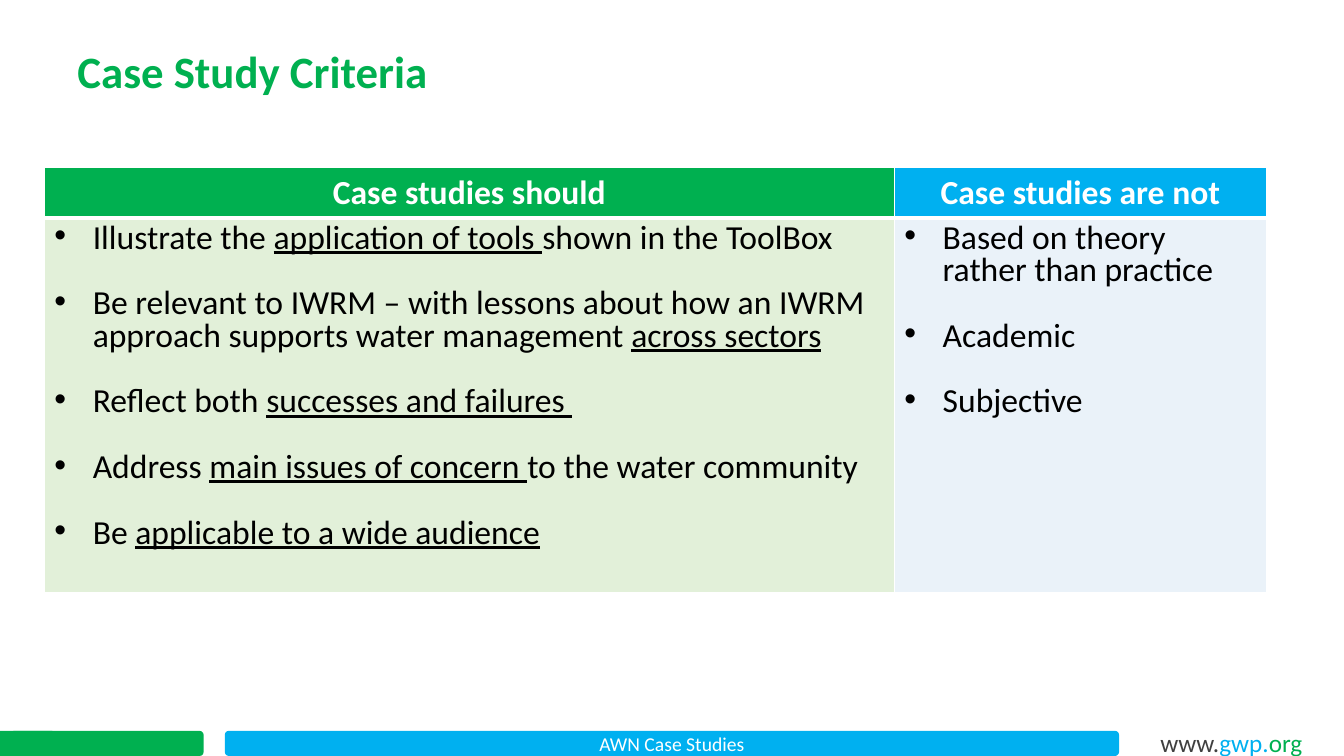
from lxml import etree
from pptx import Presentation
from pptx import util as u
from pptx.dml.color import RGBColor
from pptx.enum import shapes, text
from pptx.oxml.ns import qn

COLORS = {
    "green": "00B050", "blue": "00B0F0", "white": "FFFFFF", "black": "000000",
    "gray": "404040", "pale_green": "E2F0D9", "pale_blue": "BDD7EE",
}

# Each point is a list of (text, underlined) runs
SHOULD = [
    [("Illustrate the ", False), ("application of tools ", True),
     ("shown in the ToolBox", False)],
    [("Be relevant to IWRM – with lessons about how an IWRM approach "
      "supports water management ", False), ("across sectors", True)],
    [("Reflect both ", False), ("successes and failures ", True)],
    [("Address ", False), ("main issues of concern ", True),
     ("to the water community", False)],
    [("Be ", False), ("applicable to a wide audience", True)],
]
ARE_NOT = [
    [("Based on theory rather than practice", False)],
    [("Academic", False)],
    [("Subjective", False)],
]


def rgb(name):
    return RGBColor.from_string(COLORS[name])


class SlideBuilder:
    font_name = "Calibri"

    def __init__(self, slide):
        self.slide = slide

    def style(self, font, size, color, bold=False):
        font.name = self.font_name
        font.size = u.Pt(size)
        font.bold = bold
        font.color.rgb = rgb(color)

    def bar(self, kind, left, width, color, label=""):
        shape = self.slide.shapes.add_shape(
            kind, u.Inches(left), u.Inches(7.25), u.Inches(width), u.Inches(0.25))
        shape.shadow.inherit = False
        shape.fill.solid()
        shape.fill.fore_color.rgb = rgb(color)
        shape.line.fill.background()
        if label:
            frame = shape.text_frame
            frame.vertical_anchor = text.MSO_ANCHOR.MIDDLE
            paragraph = frame.paragraphs[0]
            paragraph.text = label
            paragraph.alignment = text.PP_ALIGN.CENTER
            self.style(paragraph.font, 14, "white")

    def textbox(self, box, runs, size, line_spacing, bold=False):
        shape = self.slide.shapes.add_textbox(*map(u.Inches, box))
        shape.text_frame.word_wrap = True
        paragraph = shape.text_frame.paragraphs[0]
        paragraph.line_spacing = line_spacing
        for words, color in runs:
            run = paragraph.add_run()
            run.text = words
            self.style(run.font, size, color, bold)

    def table(self, left, top, widths, heights):
        frame = self.slide.shapes.add_table(
            len(heights), len(widths), u.Inches(left), u.Inches(top),
            u.Inches(sum(widths)), u.Inches(sum(heights)))
        for column, width in zip(frame.table.columns, widths):
            column.width = u.Inches(width)
        for row, height in zip(frame.table.rows, heights):
            row.height = u.Inches(height)
        return frame.table

    def cell_style(self, cell, color, top=1, bottom=1, alpha=None):
        properties = cell._tc.get_or_add_tcPr()
        for side, width in (("L", 1), ("R", 1), ("T", top), ("B", bottom)):
            line = etree.SubElement(properties, qn(f"a:ln{side}"), w=str(u.Pt(width)))
            fill = etree.SubElement(line, qn("a:solidFill"))
            etree.SubElement(fill, qn("a:srgbClr"), val=COLORS["white"])
        cell.fill.solid()
        cell.fill.fore_color.rgb = rgb(color)
        if alpha:
            tint = properties.find(qn("a:solidFill")).find(qn("a:srgbClr"))
            etree.SubElement(tint, qn("a:alpha"), val=str(alpha * 1000))

    def header_cell(self, cell, label, color):
        self.cell_style(cell, color, bottom=3)
        paragraph = cell.text_frame.paragraphs[0]
        paragraph.text = label
        paragraph.alignment = text.PP_ALIGN.CENTER
        self.style(paragraph.font, 24, "white", bold=True)

    def bullet_cell(self, cell, points, color, alpha=None):
        self.cell_style(cell, color, top=3, alpha=alpha)
        frame = cell.text_frame
        for index, runs in enumerate(points):
            paragraph = frame.add_paragraph() if index else frame.paragraphs[0]
            properties = paragraph._p.get_or_add_pPr()
            indent = u.Inches(0.38)
            properties.set("marL", str(indent))
            properties.set("indent", str(-indent))
            etree.SubElement(properties, qn("a:buFont"), typeface="Arial")
            etree.SubElement(properties, qn("a:buChar"), char="•")
            paragraph.line_spacing = 0.8
            if index:
                paragraph.space_before = u.Pt(23.4)
            self.style(paragraph.font, 24, "black")
            for words, underlined in runs:
                run = paragraph.add_run()
                run.text = words
                run.font.underline = underlined


def main():
    presentation = Presentation()
    presentation.slide_width = u.Inches(13.33)
    presentation.slide_height = u.Inches(7.5)
    builder = SlideBuilder(presentation.slides.add_slide(presentation.slide_layouts[6]))

    # Footer
    rounded = shapes.MSO_SHAPE.ROUNDED_RECTANGLE
    builder.bar(rounded, 0.1, 1.92, "green")
    builder.bar(rounded, 2.23, 8.87, "blue", "AWN Case Studies")
    builder.bar(shapes.MSO_SHAPE.RECTANGLE, 0, 0.52, "green")
    address = [("www.", "gray"), ("gwp.", "blue"), ("org", "green")]
    builder.textbox((11.41, 7.12, 1.64, 0.38), address, 18, 1.15)

    # Title
    builder.textbox((0.67, 0.44, 11.68, 0.8), [("Case Study Criteria", "green")],
                    32, 0.9, bold=True)

    # Criteria table
    table = builder.table(0.44, 1.66, (8.43, 3.69), (0.5, 3.72))
    builder.header_cell(table.cell(0, 0), "Case studies should", "green")
    builder.header_cell(table.cell(0, 1), "Case studies are not", "blue")
    builder.bullet_cell(table.cell(1, 0), SHOULD, "pale_green")
    builder.bullet_cell(table.cell(1, 1), ARE_NOT, "pale_blue", alpha=31)

    presentation.save("out.pptx")


if __name__ == "__main__":
    main()
